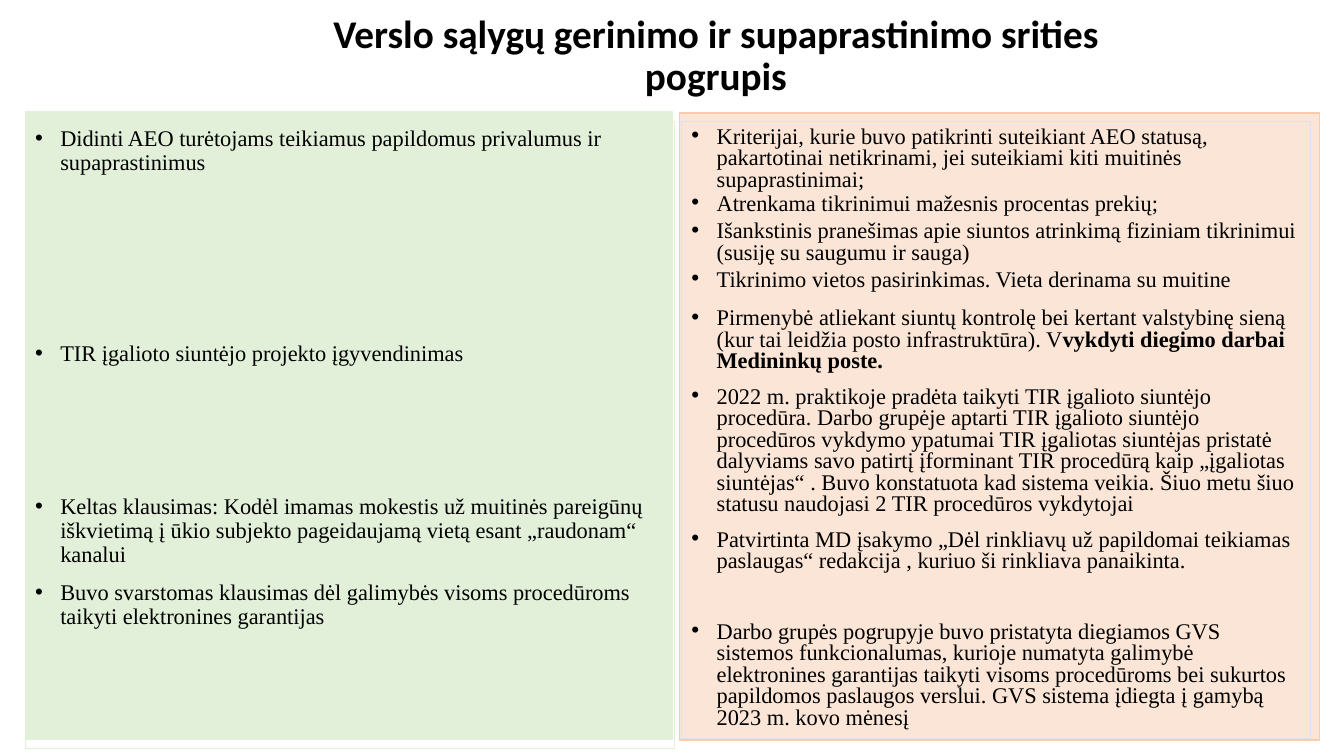
from lxml.etree import SubElement
from pptx import Presentation
from pptx.dml.color import RGBColor
from pptx.enum.shapes import MSO_SHAPE
from pptx.enum.text import MSO_ANCHOR, MSO_AUTO_SIZE, PP_ALIGN
from pptx.oxml.ns import qn
from pptx.util import Inches, Pt

COLORS = {"text": "000000", "green": "E2F0D9", "peach": "FBE5D6",
          "peach_edge": "F8CBAD", "blue_edge": "DAE3F3"}
TITLE = "Verslo sąlygų gerinimo ir supaprastinimo srities pogrupis"
WIDE, TIGHT = {"space_before": Pt(10)}, {"space_before": Pt(2), "space_after": Pt(2)}
ISSUES = [
    (WIDE, ["Didinti AEO turėtojams teikiamus papildomus privalumus ir supaprastinimus"]),
    ({"space_before": Pt(119)}, ["TIR įgalioto siuntėjo projekto įgyvendinimas"]),
    ({"space_before": Pt(92)}, [
        "Keltas klausimas: Kodėl imamas mokestis už muitinės pareigūnų iškvietimą "
        "į ūkio subjekto pageidaujamą vietą esant „raudonam“ kanalui"]),
    (WIDE, ["Buvo svarstomas klausimas dėl galimybės visoms procedūroms taikyti "
            "elektronines garantijas"]),
]
RESULTS = [
    (WIDE, ["Kriterijai, kurie buvo patikrinti suteikiant AEO statusą, pakartotinai "
            "netikrinami, jei suteikiami kiti muitinės supaprastinimai;"]),
    (TIGHT, ["Atrenkama tikrinimui mažesnis procentas prekių;"]),
    (TIGHT, ["Išankstinis pranešimas apie siuntos atrinkimą fiziniam tikrinimui "
             "(susiję su saugumu ir sauga)"]),
    (TIGHT, ["Tikrinimo vietos pasirinkimas. Vieta derinama su muitine"]),
    (WIDE, ["Pirmenybė atliekant siuntų kontrolę bei kertant valstybinę sieną "
            "(kur tai leidžia posto infrastruktūra). V",
            "vykdyti diegimo darbai Medininkų poste."]),
    (WIDE, ["2022 m. praktikoje pradėta taikyti TIR įgalioto siuntėjo procedūra. "
            "Darbo grupėje aptarti TIR įgalioto siuntėjo procedūros vykdymo ypatumai "
            "TIR įgaliotas siuntėjas pristatė dalyviams savo patirtį įforminant TIR "
            "procedūrą kaip „įgaliotas siuntėjas“ . Buvo konstatuota kad sistema veikia. "
            "Šiuo metu šiuo statusu naudojasi 2 TIR procedūros vykdytojai"]),
    (WIDE, ["Patvirtinta MD įsakymo „Dėl rinkliavų už papildomai teikiamas paslaugas“ "
            "redakcija , kuriuo ši rinkliava panaikinta."]),
    ({"space_before": Pt(35)}, [
        "Darbo grupės pogrupyje buvo pristatyta diegiamos GVS sistemos funkcionalumas, "
        "kurioje numatyta galimybė elektronines garantijas taikyti visoms procedūroms "
        "bei sukurtos papildomos paslaugos verslui. GVS sistema įdiegta į gamybą "
        "2023 m. kovo mėnesį"]),
]


def apply_format(target, values):
    """Set each named attribute of the target."""
    for name, value in values.items():
        setattr(target, name, value)


def add_span(para, text, **values):
    """Add a run of black text with the given font values."""
    span = para.add_run()
    span.text = text
    apply_format(span.font, values)
    span.font.color.rgb = RGBColor.from_string(COLORS["text"])


def add_title(slide, box):
    """Place and format the slide title."""
    title = slide.shapes.title
    apply_format(title, dict(zip(("left", "top", "width", "height"), map(Inches, box))))
    apply_format(title.text_frame, {"word_wrap": True, "auto_size": MSO_AUTO_SIZE.NONE,
                                    "vertical_anchor": MSO_ANCHOR.MIDDLE})
    para = title.text_frame.paragraphs[0]
    apply_format(para, {"alignment": PP_ALIGN.CENTER, "line_spacing": 0.9})
    add_span(para, TITLE, name="Calibri", size=Pt(28), bold=True)


def add_rectangle(slide, box, edge, width, fill=None):
    """Add an outlined rectangle, filled when a colour is given."""
    shape = slide.shapes.add_shape(MSO_SHAPE.RECTANGLE, *map(Inches, box))
    shape.shadow.inherit = False
    if fill:
        shape.fill.solid()
        shape.fill.fore_color.rgb = RGBColor.from_string(COLORS[fill])
    else:
        shape.fill.background()
    shape.line.color.rgb = RGBColor.from_string(COLORS[edge])
    shape.line.width = Pt(width)
    return shape


def add_bullets(slide, box, edge, items, line_spacing):
    """Add a framed bullet list, with second spans in bold."""
    frame = add_rectangle(slide, box, edge, 0.75).text_frame
    apply_format(frame, {"word_wrap": True, "vertical_anchor": MSO_ANCHOR.TOP})
    for index, (spacing, texts) in enumerate(items):
        para = frame.add_paragraph() if index else frame.paragraphs[0]
        apply_format(para, {"alignment": PP_ALIGN.LEFT, "line_spacing": line_spacing,
                            **spacing})
        properties = para._p.get_or_add_pPr()
        properties.set("marL", str(Inches(0.25)))
        properties.set("indent", str(-Inches(0.25)))
        SubElement(properties, qn("a:buFont"), typeface="Arial")
        SubElement(properties, qn("a:buChar"), char="•")
        for position, text in enumerate(texts):
            add_span(para, text, name="Times New Roman", size=Pt(16), bold=position > 0)


def main():
    """Build the slide and save the deck."""
    deck = Presentation()
    apply_format(deck, {"slide_width": Inches(13.33), "slide_height": Inches(7.5)})
    slide = deck.slides.add_slide(deck.slide_layouts[5])
    add_title(slide, (3, 0.07, 8.2, 0.99))
    add_rectangle(slide, (0.25, 1.11, 6.42, 6.22), "green", 1, "green")
    add_bullets(slide, (0.25, 1.21, 6.44, 6.22), "green", ISSUES, 0.9)
    add_rectangle(slide, (6.74, 1.12, 6.35, 6.22), "peach_edge", 1, "peach")
    add_bullets(slide, (6.76, 1.21, 6.24, 6.12), "blue_edge", RESULTS, 0.8)
    deck.save("out.pptx")


if __name__ == "__main__":
    main()
